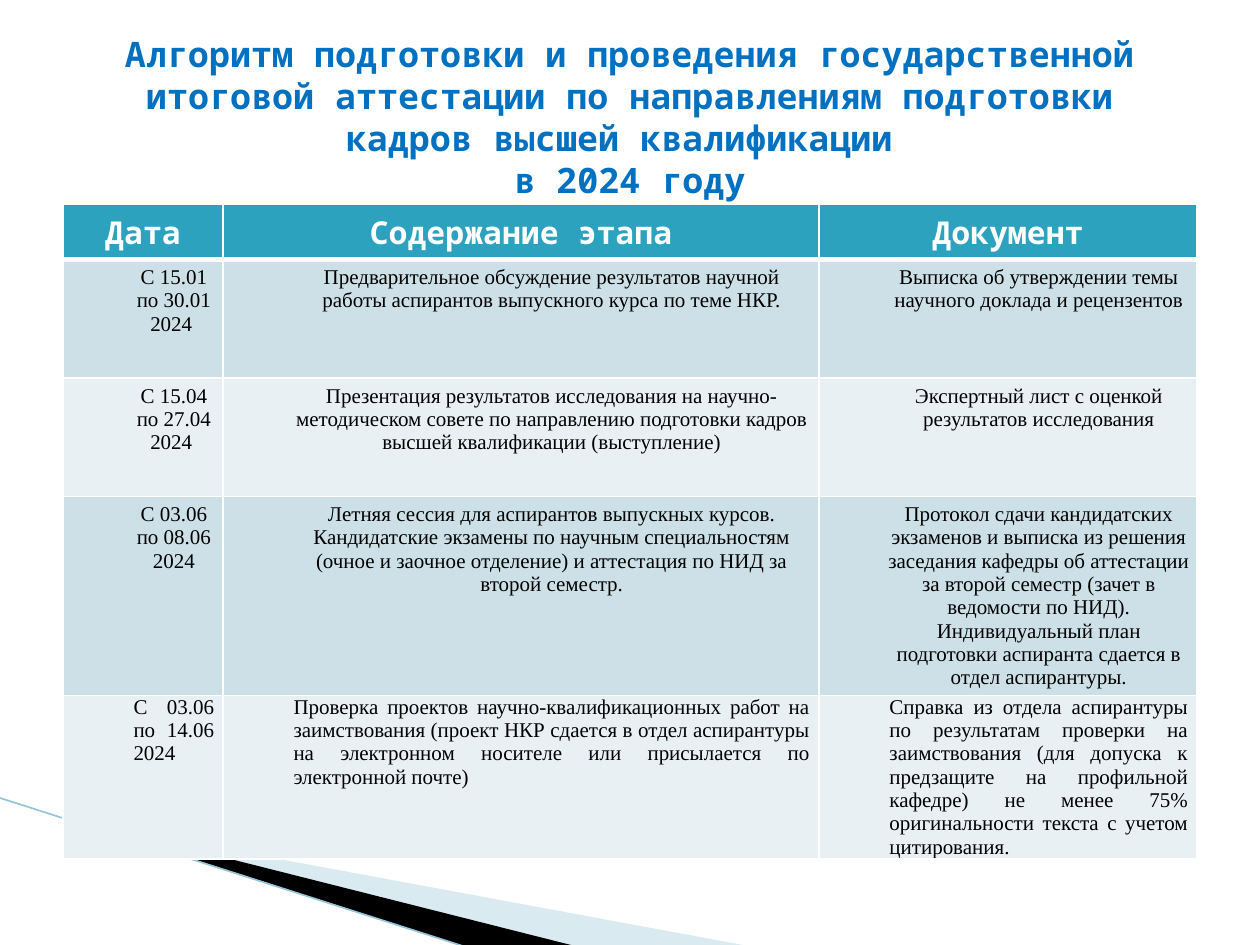
"""Builds a slide with the 2024 state final certification schedule for postgraduates."""
from dataclasses import dataclass

from lxml.etree import SubElement
from pptx import Presentation
from pptx.dml.color import RGBColor
from pptx.enum.shapes import MSO_CONNECTOR
from pptx.enum.text import MSO_ANCHOR, PP_ALIGN
from pptx.oxml.ns import qn
from pptx.util import Inches, Pt


@dataclass(frozen=True)
class Theme:
    title: str = "0070C0"
    header: str = "2DA2BF"
    bands: tuple = ("CDE0E8", "E8F0F4")
    white: str = "FFFFFF"
    black: str = "000000"
    wedge: str = "A0CBDC"
    line: str = "97C5D8"
    mono: str = "Noto Sans Mono"
    serif: str = "Times New Roman"
    title_size: int = 20
    header_size: int = 18
    body_size: int = 12


T = Theme()


def write(tf, text, font=T.serif, size=T.body_size, color=T.black, bold=False,
          align=PP_ALIGN.CENTER, indent=0):
    tf.word_wrap = True
    p = tf.paragraphs[0]
    p.text = text
    p.alignment = align
    if indent:
        pPr = p._p.get_or_add_pPr()
        pPr.set("marL", str(Inches(indent)))
        pPr.set("indent", "0")
    for r in p.runs:
        r.font.name = font
        r.font.size = Pt(size)
        r.font.bold = bold
        r.font.color.rgb = RGBColor.from_string(color)


def add_border(cell, side, width):
    ln = SubElement(cell._tc.get_or_add_tcPr(), qn(f"a:{side}"), w=str(Pt(width)))
    fill = SubElement(ln, qn("a:solidFill"))
    SubElement(fill, qn("a:srgbClr"), val=T.white)


prs = Presentation()
prs.slide_width, prs.slide_height = Inches(10), Inches(7.5)
s = prs.slides.add_slide(prs.slide_layouts[6])

wedges = [
    ([(0.55, 6.51), (5.95, 7.51), (4.56, 7.51), (0.55, 6.5)], T.wedge, 40),
    ([(0.53, 6.49), (4.57, 7.51), (3.72, 7.52), (0.54, 6.5)], T.black, 100),
]
for points, color, opacity in wedges:
    points = [(Inches(x), Inches(y)) for x, y in points]
    builder = s.shapes.build_freeform(*points[0])
    builder.add_line_segments(points[1:], close=True)
    sp = builder.convert_to_shape()
    sp.shadow.inherit = False
    sp.line.fill.background()
    sp.fill.solid()
    sp.fill.fore_color.rgb = RGBColor.from_string(color)
    if opacity < 100:
        clr = sp._element.spPr.find(f"{qn('a:solidFill')}/{qn('a:srgbClr')}")
        SubElement(clr, qn("a:alpha"), val=str(opacity * 1000))

edge = s.shapes.add_connector(MSO_CONNECTOR.STRAIGHT, Inches(-0.01), Inches(6.33),
                              Inches(3.71), Inches(7.52))
edge.line.color.rgb = RGBColor.from_string(T.line)
edge.line.width = Pt(0.95)
SubElement(edge._element.spPr, qn("a:effectLst"))

rows = [
    ("Дата", "Содержание этапа", "Документ"),
    ("С 15.01 по 30.01 2024 ",
     "Предварительное обсуждение результатов научной работы аспирантов выпускного курса "
     "по теме НКР.",
     "Выписка об утверждении темы научного доклада и рецензентов"),
    ("С 15.04 по 27.04 2024 ",
     "Презентация результатов исследования на научно-методическом совете по направлению "
     "подготовки кадров высшей квалификации (выступление)",
     "Экспертный лист с оценкой результатов исследования"),
    ("С 03.06 по 08.06 2024",
     "Летняя сессия для аспирантов выпускных курсов. Кандидатские экзамены по научным "
     "специальностям (очное и заочное отделение) и аттестация по НИД за второй семестр.",
     "Протокол сдачи кандидатских экзаменов и выписка из решения заседания кафедры об "
     "аттестации за второй семестр (зачет в ведомости по НИД). Индивидуальный план "
     "подготовки аспиранта сдается в отдел аспирантуры."),
    ("С 03.06 по 14.06 2024 ",
     "Проверка проектов научно-квалификационных работ на заимствования (проект НКР сдается "
     "в отдел аспирантуры на электронном носителе или присылается по электронной почте)",
     "Справка из отдела аспирантуры по результатам проверки на заимствования (для допуска к "
     "предзащите на профильной кафедре) не менее 75% оригинальности текста с учетом "
     "цитирования."),
]
last = len(rows) - 1
frame = s.shapes.add_table(len(rows), 3, Inches(0.5), Inches(1.62), Inches(9), Inches(5.4))
table = frame.table
for column, width in zip(table.columns, (1.27, 4.73, 3)):
    column.width = Inches(width)
for row, height in zip(table.rows, (0.41, 0.94, 0.94, 0.94, 0.41)):
    row.height = Inches(height)
frame.height = Inches(5.4)

for i, texts in enumerate(rows):
    for j, text in enumerate(texts):
        cell = table.cell(i, j)
        for side in ("lnL", "lnR", "lnT", "lnB"):
            add_border(cell, side, 3 if (i, side) in ((0, "lnB"), (1, "lnT")) else 1)
        cell.fill.solid()
        if i == 0:
            color = T.header
            cell.vertical_anchor = MSO_ANCHOR.MIDDLE
            write(cell.text_frame, text, font=T.mono, size=T.header_size,
                  color=T.white, bold=True)
        else:
            color = T.bands[(i - 1) % 2]
            side_margin, end_margin = (0.07, 0) if i == last else (0.05, 0.05)
            cell.margin_left = cell.margin_right = Inches(side_margin)
            cell.margin_top = cell.margin_bottom = Inches(end_margin)
            write(cell.text_frame, text, indent=0.49,
                  align=PP_ALIGN.JUSTIFY if i == last else PP_ALIGN.CENTER)
        cell.fill.fore_color.rgb = RGBColor.from_string(color)

title = s.shapes.add_textbox(Inches(0.5), Inches(0.3), Inches(9), Inches(1.25))
title.text_frame.vertical_anchor = MSO_ANCHOR.MIDDLE
write(title.text_frame,
      "Алгоритм подготовки и проведения государственной итоговой аттестации по направлениям "
      "подготовки кадров высшей квалификации \vв 2024 году",
      font=T.mono, size=T.title_size, color=T.title, bold=True)

prs.save("out.pptx")
